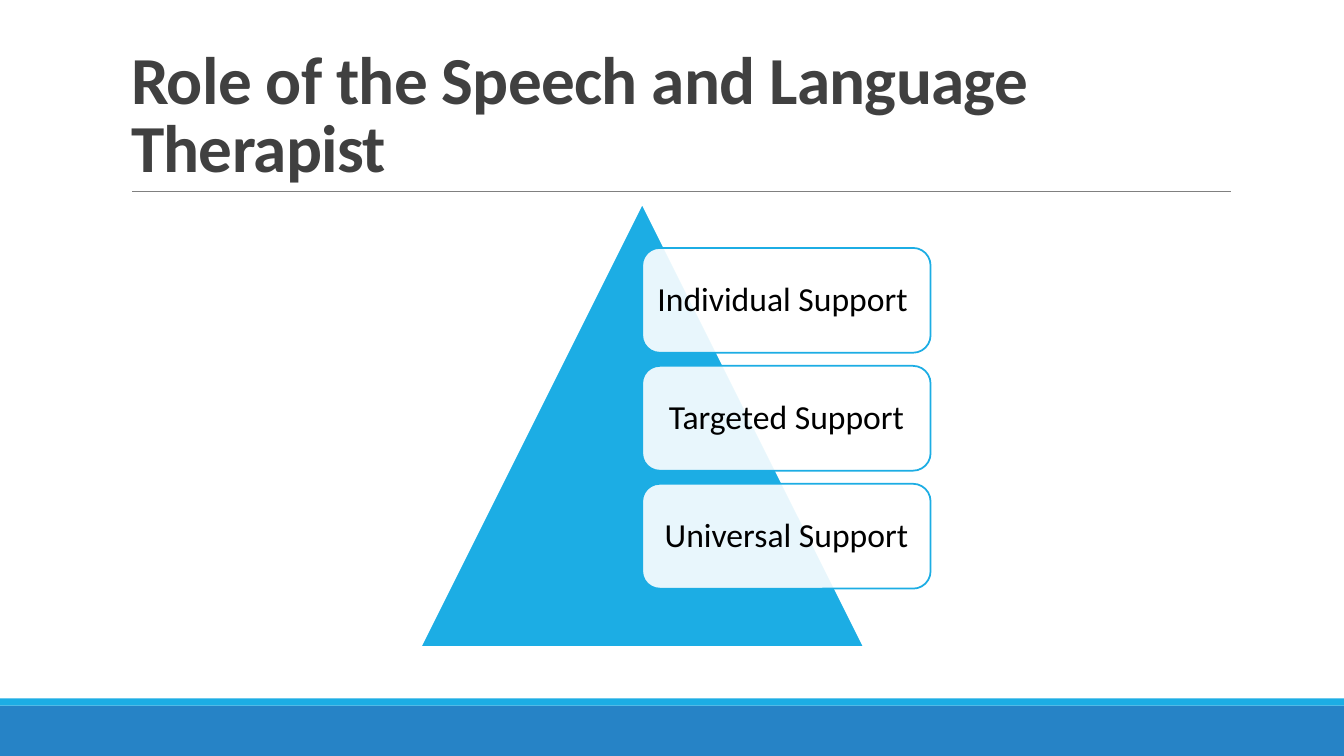
from pptx import Presentation
from pptx.dml.color import RGBColor
from pptx.enum.shapes import MSO_CONNECTOR, MSO_SHAPE
from pptx.enum.text import MSO_ANCHOR, MSO_AUTO_SIZE, PP_ALIGN
from pptx.oxml.ns import qn
from pptx.util import Inches, Pt
from lxml import etree

RECTANGLE = MSO_SHAPE.RECTANGLE
TRIANGLE = MSO_SHAPE.ISOSCELES_TRIANGLE
ROUNDED = MSO_SHAPE.ROUNDED_RECTANGLE
STRAIGHT = MSO_CONNECTOR.STRAIGHT
MIDDLE, BOTTOM = MSO_ANCHOR.MIDDLE, MSO_ANCHOR.BOTTOM
LEFT, CENTER = PP_ALIGN.LEFT, PP_ALIGN.CENTER
NO_AUTOFIT = MSO_AUTO_SIZE.NONE

COLORS = {
    "blue": "2683C6",
    "sky": "1CADE4",
    "rule": "808080",
    "title": "404040",
    "white": "FFFFFF",
    "black": "000000",
}
FONT = "Calibri"


def color(name):
    return RGBColor.from_string(COLORS[name])


def add_block(preset, left, top, width, height, fill, line=None):
    block = page.shapes.add_shape(
        preset, Inches(left), Inches(top), Inches(width), Inches(height))
    block.shadow.inherit = False
    block.fill.solid()
    block.fill.fore_color.rgb = color(fill)
    if line:
        block.line.color.rgb = color(line)
        block.line.width = Pt(1.25)
    else:
        block.line.fill.background()
    return block


deck = Presentation()
deck.slide_width, deck.slide_height = Inches(13.33), Inches(7.5)
page = deck.slides.add_slide(deck.slide_layouts[5])

# Footer bands
add_block(RECTANGLE, 0, 7, 13.33, 0.5, "blue")
add_block(RECTANGLE, 0, 6.93, 13.33, 0.07, "sky")

# Rule under the title
rule = page.shapes.add_connector(
    STRAIGHT, Inches(1.31), Inches(1.9), Inches(12.21), Inches(1.9))
rule.line.color.rgb = color("rule")
rule.line.width = Pt(0.5)
etree.SubElement(rule._element.spPr, qn("a:effectLst"))

# Title
title = page.shapes.title
title.left, title.top = Inches(1.2), Inches(0.31)
title.width, title.height = Inches(11), Inches(1.59)
title.text_frame.text = "Role of the Speech and Language Therapist"
title.text_frame.auto_size = NO_AUTOFIT
title.text_frame.word_wrap = True
title.text_frame.vertical_anchor = BOTTOM
para = title.text_frame.paragraphs[0]
para.alignment = LEFT
para.line_spacing = 0.85
para.font.name, para.font.size, para.font.bold = FONT, Pt(48), True
para.font.color.rgb = color("title")
para.runs[0].font._element.set("spc", "-50")

# Pyramid
add_block(TRIANGLE, 4.17, 2.02, 4.4, 4.4, "sky", "white")

# Support levels, see-through over the pyramid
levels = ["Individual Support ", "Targeted Support", "Universal Support"]
for index, level in enumerate(levels):
    box = add_block(ROUNDED, 6.37, 2.46 + 1.17 * index, 2.86, 1.04, "white", "sky")
    fill_color = box._element.spPr.find(qn("a:solidFill"))[0]
    etree.SubElement(fill_color, qn("a:alpha"), val="90000")
    frame = box.text_frame
    frame.text = level
    frame.word_wrap = True
    frame.vertical_anchor = MIDDLE
    frame.margin_left = frame.margin_right = Inches(0.1)
    frame.margin_top = frame.margin_bottom = Inches(0.1)
    para = frame.paragraphs[0]
    para.alignment = CENTER
    para.line_spacing = 0.9
    para.font.name, para.font.size = FONT, Pt(24)
    para.font.color.rgb = color("black")

deck.save("out.pptx")
